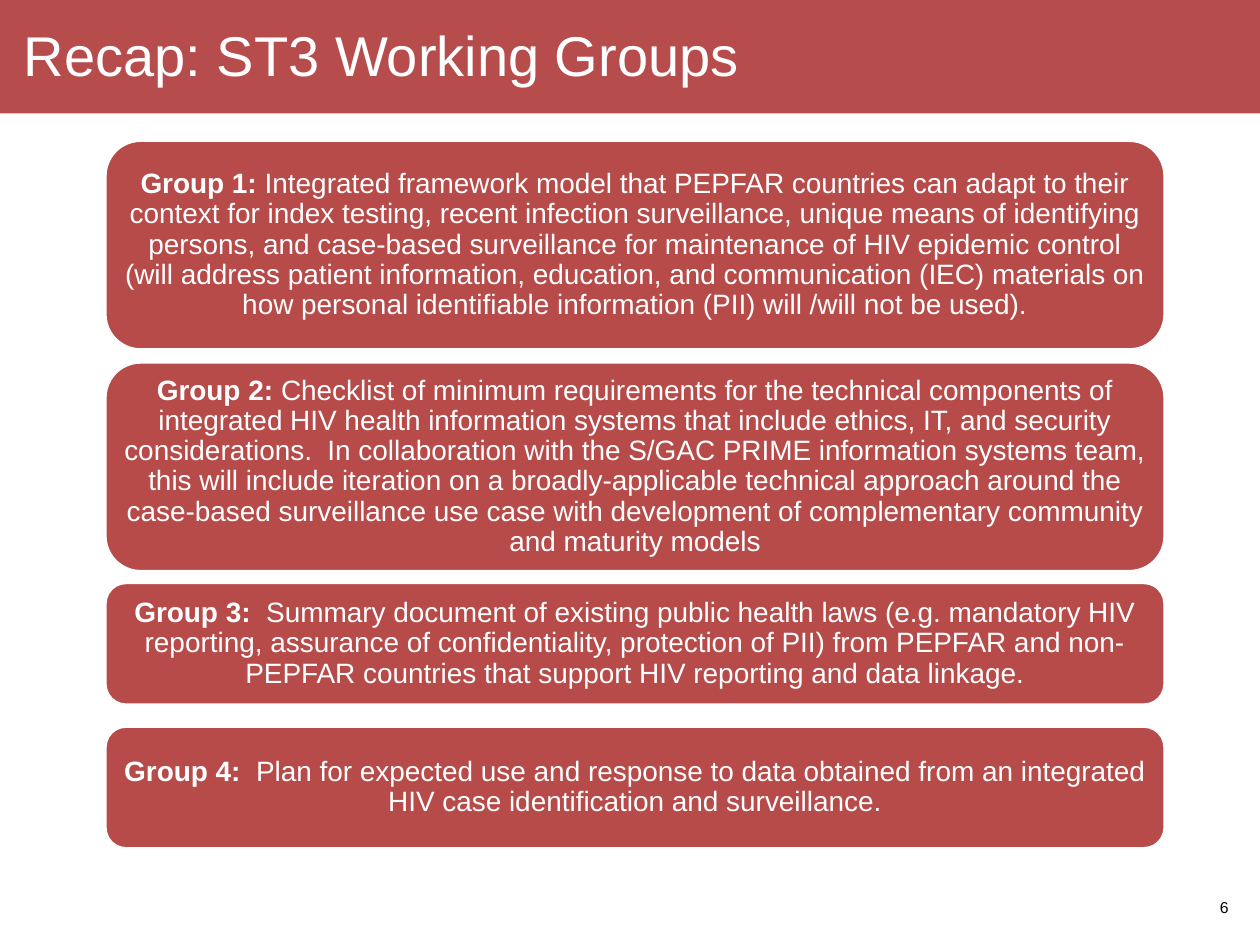
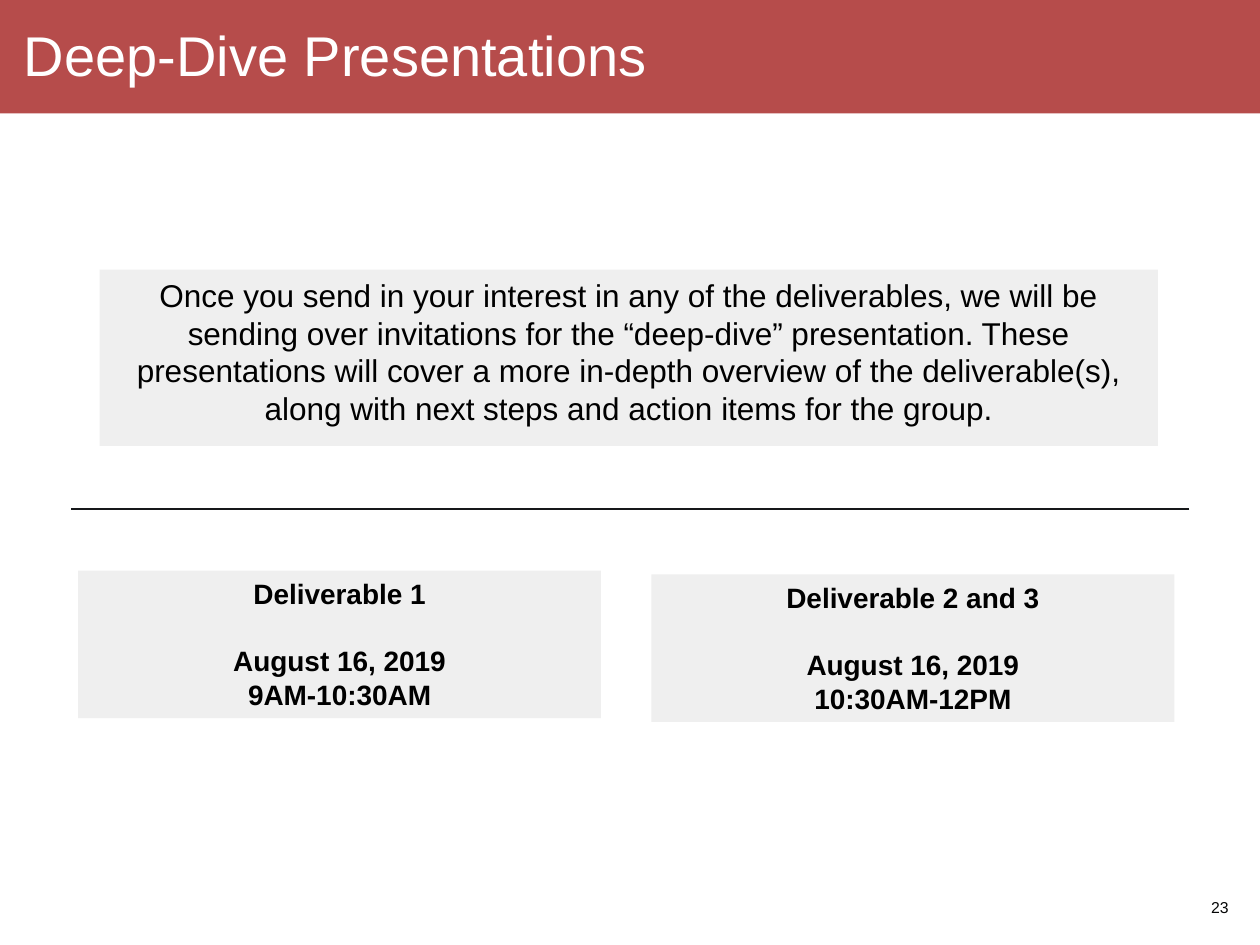
"""Build the working groups recap and the deep-dive schedule slides."""
from lxml.etree import SubElement
from pptx import Presentation
from pptx.dml.color import RGBColor
from pptx.enum.shapes import MSO_CONNECTOR, MSO_SHAPE
from pptx.enum.text import MSO_ANCHOR, PP_ALIGN
from pptx.oxml.ns import qn
from pptx.util import Inches, Pt

BAND = RGBColor(0xB6, 0x4C, 0x4B)
CARD = RGBColor(0xB6, 0x4B, 0x4A)
WHITE = RGBColor(0xFF, 0xFF, 0xFF)
GREY = RGBColor(0xEF, 0xEF, 0xEF)
BLACK = RGBColor(0, 0, 0)
INK = RGBColor(0x05, 0x06, 0x06)
RULE = RGBColor(0x16, 0x18, 0x1A)
FONT = "Arial"

GROUPS = [
    (1.12, 1.65, "Group 1: ", "Integrated framework model that PEPFAR countries can adapt to their "
     "context for index testing, recent infection surveillance, unique means of identifying persons, "
     "and case-based surveillance for maintenance of HIV epidemic control (will address patient "
     "information, education, and communication (IEC) materials on how personal identifiable "
     "information (PII) will /will not be used)."),
    (2.88, 1.65, "Group 2:", " Checklist of minimum requirements for the technical components of "
     "integrated HIV health information systems that include ethics, IT, and security "
     "considerations.  In collaboration with the S/GAC PRIME information systems team, this will "
     "include iteration on a broadly-applicable technical approach around the case-based "
     "surveillance use case with development of complementary community and maturity models"),
    (4.63, 0.96, "Group 3: ", " Summary document of existing public health laws (e.g. mandatory HIV "
     "reporting, assurance of confidentiality, protection of PII) from PEPFAR and non-PEPFAR "
     "countries that support HIV reporting and data linkage."),
    (5.77, 0.96, "Group 4: ", " Plan for expected use and response to data obtained from an "
     "integrated HIV case identification and surveillance."),
]
INTRO = ("Once you send in your interest in any of the deliverables, we will be sending over "
         "invitations for the “deep-dive” presentation. These presentations will cover a more "
         "in-depth overview of the deliverable(s), along with next steps and action items for "
         "the group.")
DATES = [
    (0.62, 4.53, "Deliverable 1", "9AM-10:30AM"),
    (5.17, 4.56, "Deliverable 2 and 3", "10:30AM-12PM"),
]


def add_box(slide, kind, left, top, wide, high, fill):
    box = slide.shapes.add_shape(kind, Inches(left), Inches(top), Inches(wide), Inches(high))
    box.shadow.inherit = False
    if fill is None:
        box.fill.background()
    else:
        box.fill.solid()
        box.fill.fore_color.rgb = fill
    box.line.fill.background()
    box.text_frame.word_wrap = True
    box.text_frame.vertical_anchor = MSO_ANCHOR.TOP
    return box


def style(frame, size, color, align, bold=False):
    for para in frame.paragraphs:
        para.alignment = align
        for run in para.runs:
            run.font.name = FONT
            run.font.size = Pt(size)
            run.font.bold = bold
            run.font.color.rgb = color


deck = Presentation()
deck.slide_width = Inches(10)
deck.slide_height = Inches(7.5)

pages = []
for title, number in [("Recap: ST3 Working Groups", "6"), ("Deep-Dive Presentations", "23")]:
    slide = deck.slides.add_slide(deck.slide_layouts[6])
    add_box(slide, MSO_SHAPE.RECTANGLE, 0, 0, 10, 0.9, BAND)

    frame = add_box(slide, MSO_SHAPE.RECTANGLE, 9.37, 7, 0.48, 0.4, None).text_frame
    frame.text = number
    frame.vertical_anchor = MSO_ANCHOR.MIDDLE
    style(frame, 9, INK, PP_ALIGN.RIGHT)

    frame = add_box(slide, MSO_SHAPE.RECTANGLE, 0.19, 0.22, 9.59, 0.5, None).text_frame
    frame.margin_left = frame.margin_right = frame.margin_top = frame.margin_bottom = 0
    frame.text = title
    frame.paragraphs[0].line_spacing = 0.9
    style(frame, 32, WHITE, PP_ALIGN.LEFT)
    pages.append(slide)

recap, dive = pages

for top, high, label, text in GROUPS:
    card = add_box(recap, MSO_SHAPE.ROUNDED_RECTANGLE, 0.84, top, 8.4, high, CARD)
    card.adjustments[0] = 0.167
    card.line.color.rgb = WHITE
    card.line.width = Pt(1)
    frame = card.text_frame
    frame.vertical_anchor = MSO_ANCHOR.MIDDLE
    frame.margin_left = frame.margin_right = Inches(0.13 - 0.05 * high)
    frame.margin_top = frame.margin_bottom = 0
    para = frame.paragraphs[0]
    para.line_spacing = 0.9
    for part in (label, text):
        para.add_run().text = part
    style(frame, 16, WHITE, PP_ALIGN.CENTER)
    para.runs[0].font.bold = True

for left, top, name, hours in DATES:
    frame = add_box(dive, MSO_SHAPE.RECTANGLE, left, top, 4.15, 1.17, GREY).text_frame
    frame.text = "\n".join([name, "August 16, 2019", hours])
    frame.paragraphs[1].space_before = Pt(19)
    style(frame, 16, BLACK, PP_ALIGN.CENTER, True)

line = dive.shapes.add_connector(
    MSO_CONNECTOR.STRAIGHT, Inches(9.44), Inches(4.04), Inches(0.56), Inches(4.04))
line.line.color.rgb = RULE
line.line.width = Pt(1)
SubElement(line._element.spPr, qn("a:effectLst"))

frame = add_box(dive, MSO_SHAPE.RECTANGLE, 0.79, 2.14, 8.4, 1.4, GREY).text_frame
frame.text = INTRO
style(frame, 18, BLACK, PP_ALIGN.CENTER)

deck.save("out.pptx")
